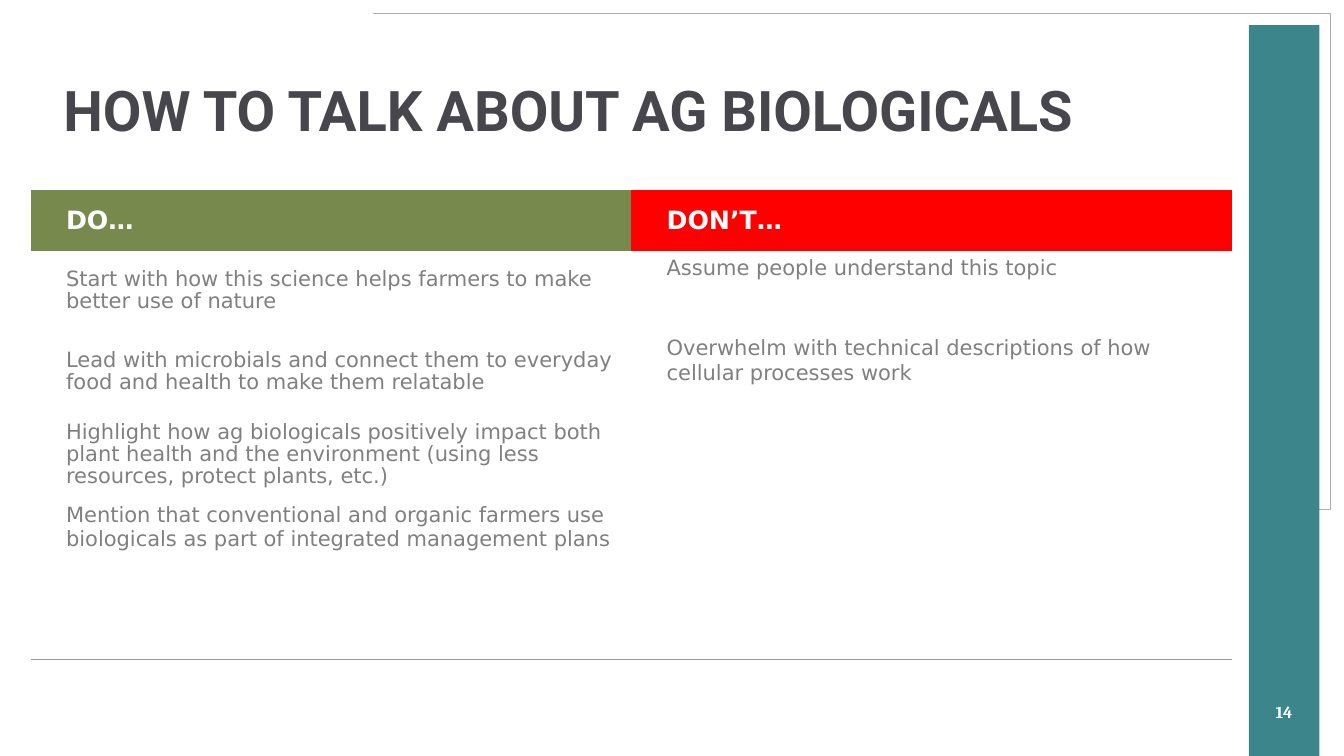
from dataclasses import dataclass

from lxml.etree import SubElement
from pptx import Presentation
from pptx.dml.color import RGBColor
from pptx.enum.shapes import MSO_SHAPE as Shape
from pptx.enum.text import MSO_ANCHOR as Anchor, PP_ALIGN as Align
from pptx.oxml.ns import qn
from pptx.util import Pt

COLORS = {
    "white": "FFFFFF", "title": "47464C", "teal": "3C868B", "frame": "AFABAB",
    "do": "78894D", "dont": "FF0000", "text": "808080", "rule": "999999",
}


@dataclass
class Style:
    font: str
    size: float
    color: str
    bold: bool = False
    spacing: float = 1.0
    align: Align = Align.LEFT


@dataclass
class Entry:
    text: str = ""
    middle: bool = False  # centred vertically, with tighter lines


HEAD = Style("DejaVu Sans", 18, "white", bold=True)
BODY = Style("DejaVu Sans", 15, "text")
TIGHT = Style("DejaVu Sans", 15, "text", spacing=0.9)
TITLE = Style("Roboto", 40, "title", bold=True, spacing=0.9)
NUMBER = Style("Cambria", 12, "white", bold=True, align=Align.CENTER)

HEADINGS = [("DO…", "do"), ("DON’T…", "dont")]
ADVICE = [
    (Entry("Start with how this science helps farmers to make better use of nature", True),
     Entry("Assume people understand this topic")),
    (Entry("Lead with microbials and connect them to everyday food and health "
           "to make them relatable", True),
     Entry("Overwhelm with technical descriptions of how cellular processes work")),
    (Entry("Highlight how ag biologicals positively impact both plant health and the "
           "environment (using less resources, protect plants, etc.)", True), Entry()),
    (Entry("Mention that conventional and organic farmers use biologicals as part of "
           "integrated management plans"), Entry()),
    (Entry(), Entry()),
    (Entry(), Entry()),
]
ROW_HEIGHTS = [43.2, 57.6, 57.6, 61.2, 57.6, 57.6, 57.6]


def rgb(name: str) -> RGBColor:
    return RGBColor.from_string(COLORS[name])


def write(tf, text: str, style: Style) -> None:
    p = tf.paragraphs[0]
    p.alignment = style.align
    p.line_spacing = style.spacing
    r = p.add_run()
    r.text = text
    r.font.name = style.font
    r.font.size = Pt(style.size)
    r.font.bold = style.bold
    r.font.color.rgb = rgb(style.color)


def add_text(s, left: float, top: float, width: float, height: float,
             text: str, style: Style) -> None:
    tf = s.shapes.add_textbox(Pt(left), Pt(top), Pt(width), Pt(height)).text_frame
    tf.word_wrap = True
    tf.vertical_anchor = Anchor.MIDDLE
    write(tf, text, style)


def set_borders(cell, ruled: str) -> None:
    """Rule the sides named in ruled and clear the others."""
    tc_pr = cell._tc.get_or_add_tcPr()
    for side in "LRTB":
        ln = SubElement(tc_pr, qn(f"a:ln{side}"), w=str(Pt(0.75)))
        if side in ruled:
            fill = SubElement(ln, qn("a:solidFill"))
            SubElement(fill, qn("a:srgbClr"), val=COLORS["rule"])
        else:
            SubElement(ln, qn("a:noFill"))


def set_cell(cell, pad: float, middle: bool) -> None:
    cell.margin_left, cell.margin_right = Pt(25.2), Pt(7.2)
    cell.margin_top = cell.margin_bottom = Pt(pad)
    cell.vertical_anchor = Anchor.MIDDLE if middle else Anchor.TOP


def add_frame(s) -> None:
    builder = s.shapes.build_freeform(Pt(934.6), Pt(363.6))
    builder.add_line_segments(
        [(Pt(950.4), Pt(363.6)), (Pt(950.4), Pt(9.4)), (Pt(266.4), Pt(9.4))], close=False)
    sp = builder.convert_to_shape()
    sp.shadow.inherit = False
    sp.fill.background()
    sp.line.color.rgb = rgb("frame")
    sp.line.width = Pt(0.25)


def add_bar(s) -> None:
    sp = s.shapes.add_shape(Shape.RECTANGLE, Pt(892.1), Pt(18), Pt(50.4), Pt(522))
    sp.shadow.inherit = False
    sp.fill.solid()
    sp.fill.fore_color.rgb = rgb("teal")
    sp.line.fill.background()


def add_advice(s) -> None:
    table = s.shapes.add_table(len(ADVICE) + 1, len(HEADINGS), Pt(22), Pt(135.9),
                               Pt(858), Pt(sum(ROW_HEIGHTS))).table
    table.first_row = table.horz_banding = False
    for row, height in zip(table.rows, ROW_HEIGHTS):
        row.height = Pt(height)

    # Heading row
    for col, (text, color) in enumerate(HEADINGS):
        cell = table.cell(0, col)
        set_cell(cell, 3.6, True)
        set_borders(cell, "")
        cell.fill.solid()
        cell.fill.fore_color.rgb = rgb(color)
        write(cell.text_frame, text, HEAD)

    # Advice rows, with rules between them
    for i, entries in enumerate(ADVICE, start=1):
        for col, entry in enumerate(entries):
            cell = table.cell(i, col)
            set_cell(cell, 7.2 if entry.middle else 3.6, entry.middle)
            set_borders(cell, "B" if i < len(ADVICE) else "T")
            cell.fill.background()
            if entry.text:
                write(cell.text_frame, entry.text, TIGHT if entry.middle else BODY)


def main() -> None:
    prs = Presentation()
    prs.slide_width, prs.slide_height = Pt(960), Pt(540)
    s = prs.slides.add_slide(prs.slide_layouts[6])
    # Backdrop
    add_frame(s)
    add_bar(s)
    # Content
    add_advice(s)
    add_text(s, 901.4, 493.9, 31.7, 28.8, "14", NUMBER)
    add_text(s, 38.2, 28.8, 841.7, 104.4, "HOW TO TALK ABOUT AG BIOLOGICALS", TITLE)
    prs.save("out.pptx")


if __name__ == "__main__":
    main()
